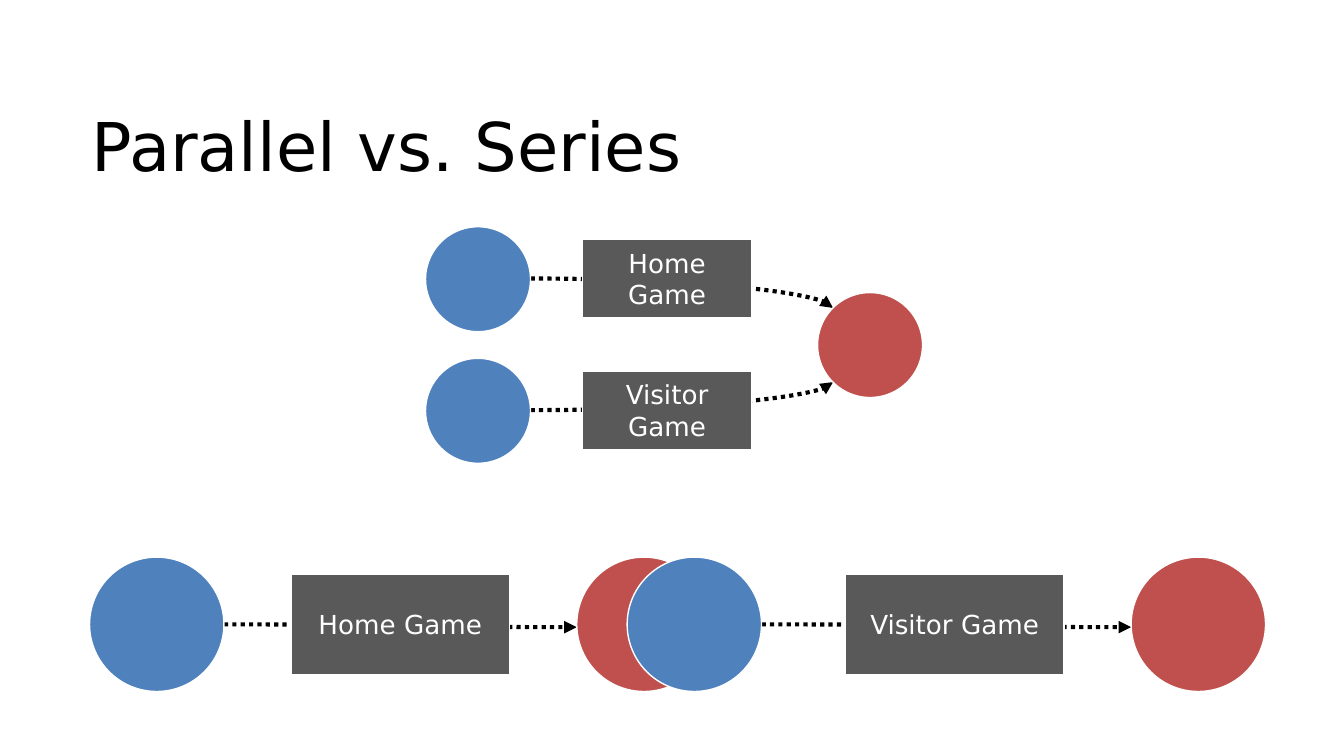
from dataclasses import dataclass

from pptx import Presentation
from pptx.dml.color import RGBColor
from pptx.enum.dml import MSO_LINE
from pptx.enum.shapes import MSO_CONNECTOR, MSO_SHAPE
from pptx.enum.text import MSO_ANCHOR, PP_ALIGN
from pptx.oxml.ns import qn
from pptx.oxml.xmlchemy import OxmlElement
from pptx.util import Pt

PX = 9525
OVAL, RECT = MSO_SHAPE.OVAL, MSO_SHAPE.RECTANGLE
CURVE = MSO_CONNECTOR.CURVE
DOT = MSO_LINE.ROUND_DOT
TOP, MIDDLE = MSO_ANCHOR.TOP, MSO_ANCHOR.MIDDLE
CENTER = PP_ALIGN.CENTER


@dataclass(frozen=True)
class Theme:
    font: str = "DejaVu Sans"
    head: int = 36
    label: int = 14
    edge: float = 0.75
    wire: float = 2.25
    ink: str = "000000"
    paper: str = "FFFFFF"
    start: str = "4F81BD"
    goal: str = "C0504D"
    game: str = "595959"


THEME = Theme()


def tint(name):
    return RGBColor.from_string(name)


def emu(*nums):
    return [num * PX for num in nums]


def write(frame, text, size, color, align=None):
    frame.word_wrap = True
    frame.text = text
    for para in frame.paragraphs:
        para.alignment = align
        for run in para.runs:
            run.font.name = THEME.font
            run.font.size = Pt(size)
            run.font.color.rgb = tint(color)


def node(slide, kind, box, fill, text=None):
    shape = slide.shapes.add_shape(kind, *emu(*box))
    shape.shadow.inherit = False
    shape.fill.solid()
    shape.fill.fore_color.rgb = tint(fill)
    shape.line.color.rgb = tint(THEME.paper)
    shape.line.width = Pt(THEME.edge)
    if text:
        shape.text_frame.vertical_anchor = MIDDLE
        write(shape.text_frame, text, THEME.label, THEME.paper, CENTER)


def arrow(slide, ends, bend="curvedConnector3"):
    link = slide.shapes.add_connector(CURVE, *emu(*ends))
    link.line.color.rgb = tint(THEME.ink)
    link.line.width = Pt(THEME.wire)
    link.line.dash_style = DOT
    tip = OxmlElement("a:tailEnd")
    tip.set("type", "triangle")
    link.line._get_or_add_ln().append(tip)
    props = link._element.spPr
    props.find(qn("a:prstGeom")).set("prst", bend)
    props.append(OxmlElement("a:effectLst"))


def title(slide, box, text):
    frame = slide.shapes.add_textbox(*emu(*box)).text_frame
    frame.vertical_anchor = TOP
    write(frame, text, THEME.head, THEME.ink)


def parallel(slide, box, games):
    left, top, width, height = box
    ball, wide, tall, inset = 75, 121, 56, 11
    step = height - ball
    goal = left + width - ball
    rise = top + step // 2
    rows = [top + step * i for i in range(len(games))]
    for y, end in zip(rows, (rise + inset, rise + ball - inset)):
        mid = y + ball // 2
        arrow(slide, (left + ball, mid, goal + inset, end), "curvedConnector2")
    for y, game in zip(rows, games):
        node(slide, OVAL, (left, y, ball, ball), THEME.start)
        spot = (left + 112, y + (ball - tall) // 2, wide, tall)
        node(slide, RECT, spot, THEME.game, game)
    node(slide, OVAL, (goal, rise, ball, ball), THEME.goal)


def leg(slide, box, game):
    left, top, width, ball = box
    wide, tall, gap, drop = 156, 72, 48, 2
    goal = left + width - ball
    mid = top + ball // 2
    arrow(slide, (left + ball, mid, goal, mid + drop))
    node(slide, OVAL, (left, top, ball, ball), THEME.start)
    node(slide, OVAL, (goal, top, ball, ball), THEME.goal)
    spot = (goal - gap - wide, top + (ball - tall) // 2, wide, tall)
    node(slide, RECT, spot, THEME.game, game)


def series(slide, box, games):
    left, top, width, height = box
    first, second = 444, 456
    leg(slide, (left, top, first, height), games[0])
    leg(slide, (left + width - second, top, second, height), games[1])


def main():
    deck = Presentation()
    deck.slide_width, deck.slide_height = emu(960, 540)
    slide = deck.slides.add_slide(deck.slide_layouts[6])
    title(slide, (56, 70, 848, 82), "Parallel vs. Series")
    parallel(slide, (304, 162, 355, 169), ("Home Game", "Visitor\nGame"))
    series(slide, (64, 398, 840, 96), ("Home Game", "Visitor Game"))
    deck.save("out.pptx")


if __name__ == "__main__":
    main()
